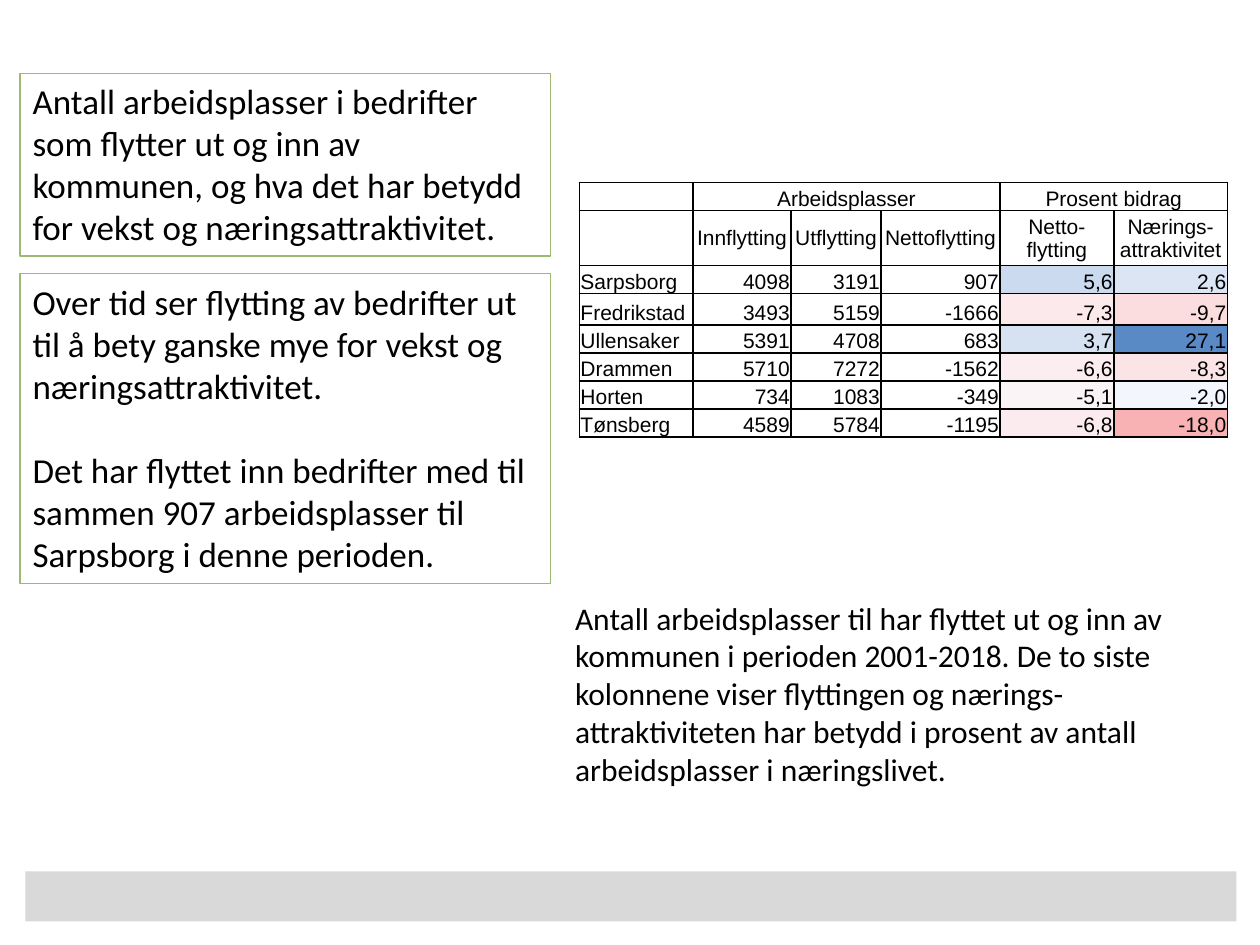
from lxml import etree
from pptx import Presentation
from pptx.dml.color import RGBColor
from pptx.enum.shapes import MSO_SHAPE
from pptx.enum.text import MSO_ANCHOR as ANCHOR, MSO_AUTO_SIZE as AUTO, PP_ALIGN as ALIGN
from pptx.oxml.ns import qn
from pptx.util import Pt

BLACK = RGBColor(0x00, 0x00, 0x00)
GREY = RGBColor(0xD9, 0xD9, 0xD9)
GREEN = RGBColor(0x9C, 0xBA, 0x72)

# Table content: municipality, job counts, then (percent, cell colour)
GROUPS = ["", "Arbeidsplasser", "", "", "Prosent bidrag", ""]
HEADS = ["", "Innflytting", "Utflytting", "Nettoflytting",
         "Netto-flytting", "Nærings-attraktivitet"]
ROWS = [
    ("Sarpsborg", "4098", "3191", "907", ("5,6", "CBDAEE"), ("2,6", "DBE5F4")),
    ("Fredrikstad", "3493", "5159", "-1666", ("-7,3", "FBE9EC"), ("-9,7", "FBDDDF")),
    ("Ullensaker", "5391", "4708", "683", ("3,7", "D6E1F2"), ("27,1", "5A8AC6")),
    ("Drammen", "5710", "7272", "-1562", ("-6,6", "FBEDF0"), ("-8,3", "FBE4E6")),
    ("Horten", "734", "1083", "-349", ("-5,1", "FBF4F7"), ("-2,0", "F3F6FC")),
    ("Tønsberg", "4589", "5784", "-1195", ("-6,8", "FBEBEE"), ("-18,0", "F9B2B4")),
]
COL_WIDTHS = [65, 56, 51.5, 68, 65, 65]
ROW_HEIGHTS = [16, 31.5, 16, 18, 16, 16, 16, 16]


def write(tf, *texts, size=20, font="Calibri", align=ALIGN.LEFT, gap=0):
    """Fill a text frame with one paragraph per text."""
    for i, text in enumerate(texts):
        p = tf.paragraphs[0] if i == 0 else tf.add_paragraph()
        p.alignment = align
        if i:
            p.space_before = Pt(gap)
        if not text:
            p._p.get_or_add_endParaRPr().set("sz", str(size * 100))
            continue
        r = p.add_run()
        r.text = text
        r.font.size, r.font.name = Pt(size), font
        r.font.color.rgb = BLACK


class Deck:
    def __init__(self, width, height):
        self.prs = Presentation()
        self.prs.slide_width, self.prs.slide_height = Pt(width), Pt(height)
        self.s = self.prs.slides.add_slide(self.prs.slide_layouts[6])

    def rect(self, x, y, w, h, fill=None, line=None):
        sp = self.s.shapes.add_shape(MSO_SHAPE.RECTANGLE, Pt(x), Pt(y), Pt(w), Pt(h))
        sp.shadow.inherit = False
        if fill is None:
            sp.fill.background()
        else:
            sp.fill.solid()
            sp.fill.fore_color.rgb = fill
        if line is None:
            sp.line.fill.background()
        else:
            sp.line.color.rgb, sp.line.width = line, Pt(0.75)
        return sp

    def framed_text(self, x, y, w, h, *texts, **fmt):
        tf = self.rect(x, y, w, h, line=GREEN).text_frame
        tf.vertical_anchor = ANCHOR.TOP
        tf.auto_size = AUTO.SHAPE_TO_FIT_TEXT
        write(tf, *texts, **fmt)

    def text(self, x, y, w, h, *texts, **fmt):
        tf = self.s.shapes.add_textbox(Pt(x), Pt(y), Pt(w), Pt(h)).text_frame
        tf.word_wrap = True
        tf.auto_size = AUTO.SHAPE_TO_FIT_TEXT
        write(tf, *texts, **fmt)

    def table(self, x, y, widths, heights):
        frame = self.s.shapes.add_table(len(heights), len(widths), Pt(x), Pt(y),
                                        Pt(sum(widths)), Pt(sum(heights)))
        tbl = frame.table
        tbl.first_row = tbl.horz_banding = False
        for col, w in zip(tbl.columns, widths):
            col.width = Pt(w)
        for row, h in zip(tbl.rows, heights):
            row.height = Pt(h)
        return tbl

    def cell(self, cell, text, align, anchor=ANCHOR.BOTTOM, fill=None):
        tc_pr = cell._tc.get_or_add_tcPr()
        for side in ("a:lnL", "a:lnR", "a:lnT", "a:lnB"):
            ln = etree.SubElement(tc_pr, qn(side), w=str(Pt(1)))
            solid = etree.SubElement(ln, qn("a:solidFill"))
            etree.SubElement(solid, qn("a:srgbClr"), val=str(BLACK))
        if fill:
            cell.fill.solid()
            cell.fill.fore_color.rgb = RGBColor.from_string(fill)
        else:
            cell.fill.background()
        cell.margin_left = cell.margin_right = cell.margin_top = Pt(0.72)
        cell.margin_bottom = 0
        cell.vertical_anchor = anchor
        write(cell.text_frame, text, size=12, font="Arial", align=align)


def main():
    deck = Deck(720, 540)

    # Footer band
    deck.rect(14.5, 498, 692, 28.5, fill=GREY)

    # Table of relocated jobs
    tbl = deck.table(331, 104.25, COL_WIDTHS, ROW_HEIGHTS)
    for c, (group, head) in enumerate(zip(GROUPS, HEADS)):
        deck.cell(tbl.cell(0, c), group, ALIGN.CENTER)
        deck.cell(tbl.cell(1, c), head, ALIGN.CENTER, ANCHOR.MIDDLE)
    for r, row in enumerate(ROWS, 2):
        for c, value in enumerate(row):
            text, fill = value if isinstance(value, tuple) else (value, None)
            align = ALIGN.RIGHT if c else ALIGN.LEFT
            deck.cell(tbl.cell(r, c), text, align, fill=fill)
    for first, last in ((1, 3), (4, 5)):
        tbl.cell(0, first).merge(tbl.cell(0, last))

    # Explanation under the table
    deck.text(321.5, 338.5, 389, 116.5,
              "Antall arbeidsplasser til har flyttet ut og inn av kommunen i perioden "
              "2001-2018. De to siste kolonnene viser flyttingen og nærings-attraktiviteten "
              "har betydd i prosent av antall arbeidsplasser i næringslivet.", size=18)

    # Framed texts on the left
    deck.framed_text(11.5, 42, 303, 104.25,
                     "Antall arbeidsplasser i bedrifter som flytter ut og inn av kommunen, "
                     "og hva det har betydd for vekst og næringsattraktivitet.")
    deck.framed_text(11.5, 156.5, 303, 177,
                     "Over tid ser flytting av bedrifter ut til å bety ganske mye for vekst "
                     "og næringsattraktivitet.",
                     "Det har flyttet inn bedrifter med til sammen 907 arbeidsplasser til "
                     "Sarpsborg i denne perioden.", gap=24)

    deck.prs.save("out.pptx")


if __name__ == "__main__":
    main()
